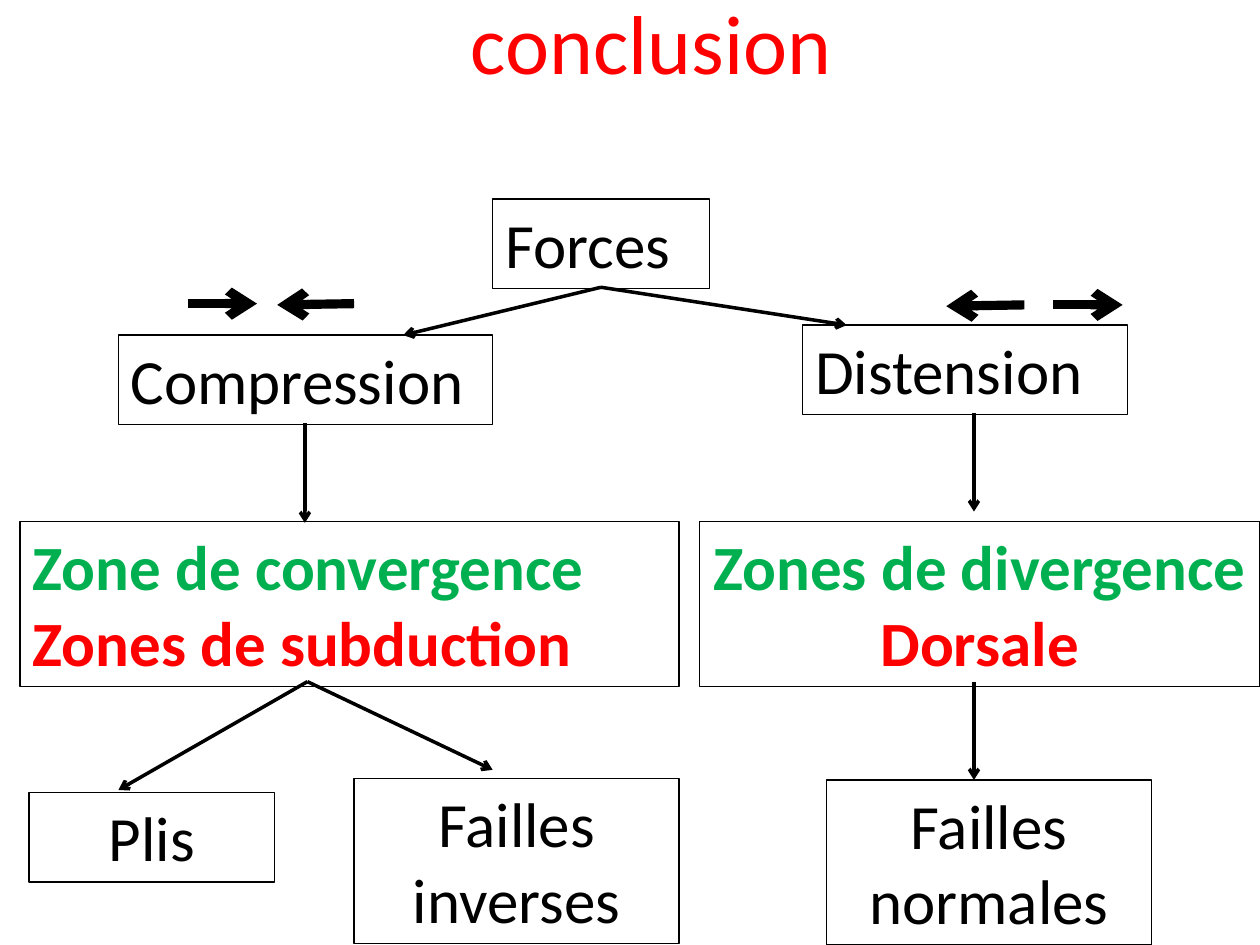
from pptx import Presentation
from pptx.dml.color import RGBColor
from pptx.enum.shapes import MSO_CONNECTOR as Connector
from pptx.enum.shapes import MSO_SHAPE as Shape
from pptx.enum.text import MSO_ANCHOR as Anchor
from pptx.enum.text import MSO_AUTO_SIZE as AutoSize
from pptx.enum.text import PP_ALIGN as Align
from pptx.oxml.ns import qn
from pptx.util import Inches, Pt
from lxml.etree import SubElement

BLACK, RED, GREEN = "000000", "FF0000", "00B050"
COLUMNS, ROWS = 100, 75
ONE_LINE, TWO_LINES = 7.1, 13.1


def color(value):
    return RGBColor.from_string(value)


class ForceDiagram:
    font = "Calibri"
    title_size = 47.7
    text_size = 36
    border_width = 0.75
    link_width = 2
    force_width = 5.25

    def __init__(self, presentation):
        self.column = presentation.slide_width / COLUMNS
        self.row = presentation.slide_height / ROWS
        self.slide = presentation.slides.add_slide(presentation.slide_layouts[5])

    def place(self, column, row):
        return round(column * self.column), round(row * self.row)

    def format_paragraph(self, paragraph, size, text_color, bold, align):
        paragraph.alignment = align
        for run in paragraph.runs:
            run.font.name = self.font
            run.font.size = Pt(size)
            run.font.bold = bold
            run.font.color.rgb = color(text_color)

    def title(self, text, column, row, width, height):
        title = self.slide.shapes.title
        title.left, title.top = self.place(column, row)
        title.width, title.height = self.place(width, height)
        frame = title.text_frame
        frame.text = text
        frame.vertical_anchor = Anchor.MIDDLE
        frame.auto_size = AutoSize.NONE
        frame.margin_top = frame.margin_bottom = 0
        self.format_paragraph(frame.paragraphs[0], self.title_size, RED, False, Align.CENTER)

    def box(self, text, column, row, width, height=ONE_LINE,
            colors=(BLACK,), bold=False, align=Align.CENTER):
        shape = self.slide.shapes.add_shape(
            Shape.RECTANGLE, *self.place(column, row), *self.place(width, height))
        shape.shadow.inherit = False
        shape.fill.background()
        shape.line.color.rgb = color(BLACK)
        shape.line.width = Pt(self.border_width)
        frame = shape.text_frame
        frame.text = text
        frame.word_wrap = True
        frame.auto_size = AutoSize.SHAPE_TO_FIT_TEXT
        frame.vertical_anchor = Anchor.TOP
        for paragraph, text_color in zip(frame.paragraphs, colors):
            self.format_paragraph(paragraph, self.text_size, text_color, bold, align)

    def arrow(self, start, end, width=link_width):
        connector = self.slide.shapes.add_connector(
            Connector.STRAIGHT, *self.place(*start), *self.place(*end))
        connector.line.color.rgb = color(BLACK)
        connector.line.width = Pt(width)
        properties = connector.line._get_or_add_ln()
        SubElement(properties, qn("a:tailEnd"), type="arrow")
        SubElement(connector._element.spPr, qn("a:effectLst"))


def main():
    presentation = Presentation()
    presentation.slide_width, presentation.slide_height = Inches(10), Inches(7.5)
    diagram = ForceDiagram(presentation)

    diagram.title("conclusion", 6.7, 0, 90, 6.6)

    diagram.box("Forces", 39.1, 15.8, 17.2, align=Align.LEFT)
    diagram.box("Compression", 9.4, 26.6, 29.7, align=Align.LEFT)
    diagram.box("Distension", 63.7, 25.8, 25.8, align=Align.LEFT)
    zone = {"height": TWO_LINES, "colors": (GREEN, RED), "bold": True}
    diagram.box("Zone de convergence\nZones de subduction", 1.6, 41.4, 52.3,
                align=Align.LEFT, **zone)
    diagram.box("Zones de divergence\nDorsale", 55.5, 41.4, 44.5, **zone)
    diagram.box("Plis", 2.3, 62.9, 19.5)
    diagram.box("Failles inverses", 28.1, 61.8, 25.8, TWO_LINES)
    diagram.box("Failles normales", 65.6, 61.9, 25.8, TWO_LINES)

    forces, convergence = (47.7, 22.8), (24.4, 54.1)
    links = [
        (forces, (32, 26.6)),
        (forces, (67.2, 25.8)),
        ((24.2, 33.6), (24.2, 41.5)),
        ((77.3, 32.8), (77.3, 40.6)),
        (convergence, (9.4, 62.7)),
        (convergence, (39.1, 61.1)),
        ((77.3, 54.1), (77.3, 61.9)),
    ]
    for start, end in links:
        diagram.arrow(start, end)

    opposed_forces = [
        ((14.9, 24.1), (20.4, 24.1)),
        ((28.1, 24.1), (22, 24.2)),
        ((81.3, 24.2), (75.1, 24.3)),
        ((83.6, 24.2), (89.1, 24.2)),
    ]
    for start, end in opposed_forces:
        diagram.arrow(start, end, diagram.force_width)

    presentation.save("out.pptx")


if __name__ == "__main__":
    main()
